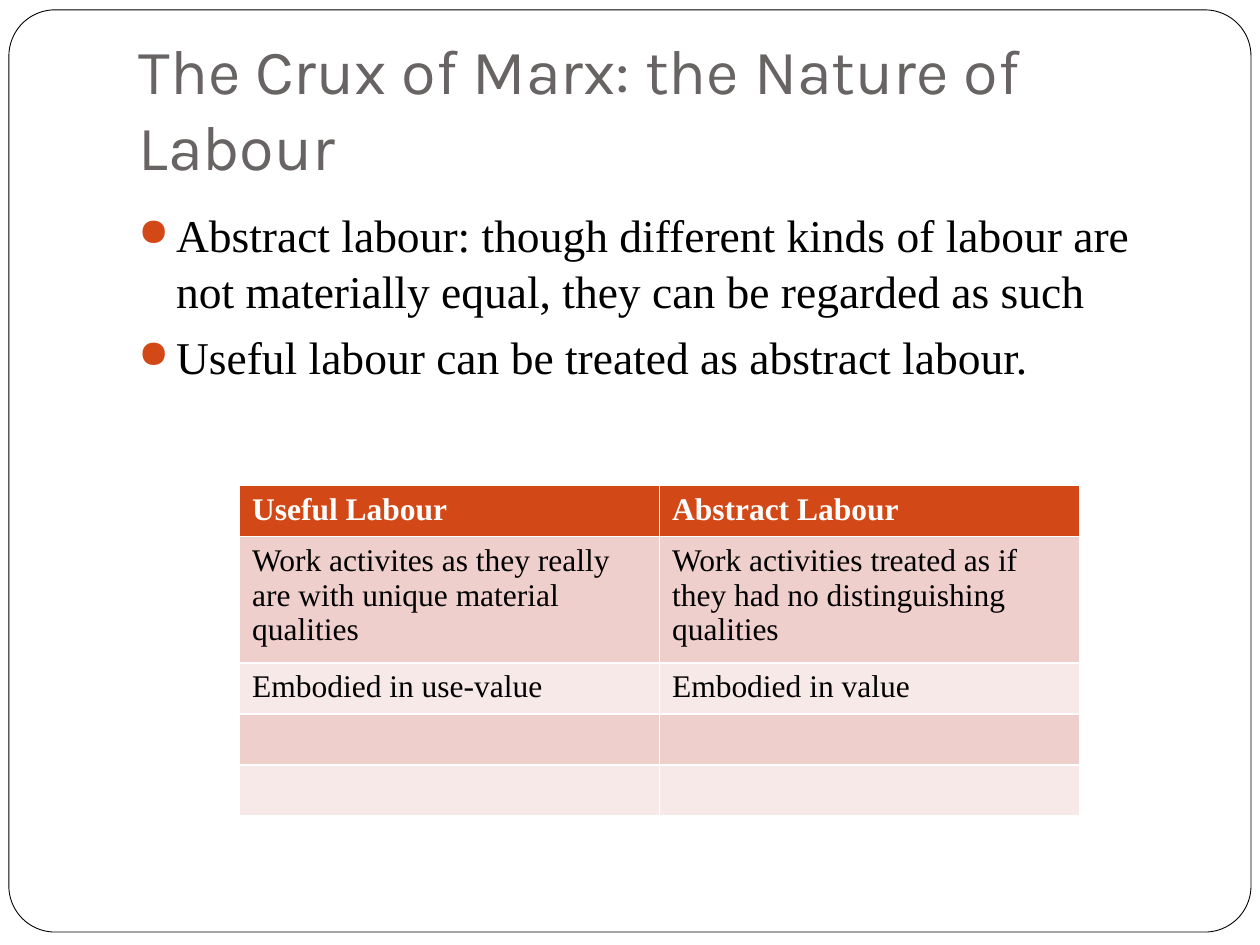
"""Build a slide that contrasts useful labour with abstract labour."""
import lxml.etree
import pptx
import pptx.dml.color
import pptx.enum.shapes
import pptx.enum.text
import pptx.oxml.ns
import pptx.util
from pptx.util import Cm

COLOURS = {
    "white": "FFFFFF",
    "black": "000000",
    "title": "696464",
    "accent": "D34817",
    "band_dark": "EFCFCC",
    "band_light": "F7E9E8",
}
BODY_FONT = "Times New Roman"
BULLETS = [
    "Abstract labour: though different kinds of labour are not materially equal, "
    "they can be regarded as such",
    "Useful labour can be treated as abstract labour.",
]
TABLE_ROWS = [
    ("Useful Labour", "Abstract Labour"),
    (
        "Work activites as they really are with unique material qualities",
        "Work activities treated as if they had no distinguishing qualities",
    ),
    ("Embodied in use-value", "Embodied in value"),
    ("", ""),
    ("", ""),
]


def colour(name):
    """Return the named colour as an RGB value."""
    return pptx.dml.color.RGBColor.from_string(COLOURS[name])


def write_text(paragraph, text, size, font=BODY_FONT, fill="black", bold=False):
    """Add a formatted run to a paragraph."""
    run = paragraph.add_run()
    run.text = text
    run.font.name = font
    run.font.size = pptx.util.Pt(size)
    run.font.bold = bold
    run.font.color.rgb = colour(fill)


def add_frame(slide):
    """Add the rounded border behind everything else."""
    frame = slide.shapes.add_shape(
        pptx.enum.shapes.MSO_SHAPE.ROUNDED_RECTANGLE,
        Cm(0.18), Cm(0.2), Cm(25.04), Cm(18.59),
    )
    frame.adjustments[0] = 0.05
    frame.shadow.inherit = False
    frame.fill.solid()
    frame.fill.fore_color.rgb = colour("white")
    frame.line.color.rgb = colour("black")
    frame.line.width = pptx.util.Pt(0.5)
    frame.element.getparent().insert(2, frame.element)


def format_title(title, text):
    """Place the title placeholder and write its text."""
    title.left, title.top = Cm(2.54), Cm(0.76)
    title.width, title.height = Cm(21.59), Cm(3.18)
    text_frame = title.text_frame
    text_frame.auto_size = pptx.enum.text.MSO_AUTO_SIZE.NONE
    text_frame.vertical_anchor = pptx.enum.text.MSO_ANCHOR.BOTTOM
    text_frame.margin_bottom = Cm(0.25)
    paragraph = text_frame.paragraphs[0]
    paragraph.alignment = pptx.enum.text.PP_ALIGN.LEFT
    write_text(paragraph, text, size=36, font="Karla", fill="title")


def set_bullet(paragraph):
    """Give a paragraph a hanging accent-coloured bullet."""
    qualified = pptx.oxml.ns.qn
    properties = paragraph._p.get_or_add_pPr()
    properties.set("marL", str(Cm(0.76)))
    properties.set("indent", str(-Cm(0.76)))
    bullet_colour = lxml.etree.SubElement(properties, qualified("a:buClr"))
    lxml.etree.SubElement(
        bullet_colour, qualified("a:srgbClr"), val=COLOURS["accent"]
    )
    lxml.etree.SubElement(properties, qualified("a:buSzPct"), val="85000")
    lxml.etree.SubElement(properties, qualified("a:buChar"), char="●")


def add_bullets(slide, items):
    """Add the bulleted body text."""
    box = slide.shapes.add_textbox(Cm(2.54), Cm(4.01), Cm(21.59), Cm(12.7))
    text_frame = box.text_frame
    text_frame.word_wrap = True
    for index, item in enumerate(items):
        paragraph = text_frame.add_paragraph() if index else text_frame.paragraphs[0]
        paragraph.space_before = pptx.util.Pt(5.8)
        paragraph.line_spacing = 1.03
        set_bullet(paragraph)
        write_text(paragraph, item, size=26)


def add_comparison_table(slide, rows):
    """Add the table with an accent header and alternating bands."""
    row_height = Cm(1.03)
    table = slide.shapes.add_table(
        len(rows), len(rows[0]), Cm(4.83), Cm(9.79), Cm(16.93), row_height * len(rows)
    ).table
    for row_index, row in enumerate(rows):
        header = row_index == 0
        band = "band_dark" if row_index % 2 else "band_light"
        for column_index, text in enumerate(row):
            cell = table.cell(row_index, column_index)
            cell.fill.solid()
            cell.fill.fore_color.rgb = colour("accent" if header else band)
            if text:
                write_text(
                    cell.text_frame.paragraphs[0], text, size=18,
                    fill="white" if header else "black", bold=header,
                )


def main():
    """Build and save the presentation."""
    presentation = pptx.Presentation()
    presentation.slide_width, presentation.slide_height = Cm(25.4), Cm(19.05)
    slide = presentation.slides.add_slide(presentation.slide_layouts[5])
    add_frame(slide)
    format_title(slide.shapes.title, "The Crux of Marx: the Nature of Labour")
    add_bullets(slide, BULLETS)
    add_comparison_table(slide, TABLE_ROWS)
    presentation.save("out.pptx")


if __name__ == "__main__":
    main()
